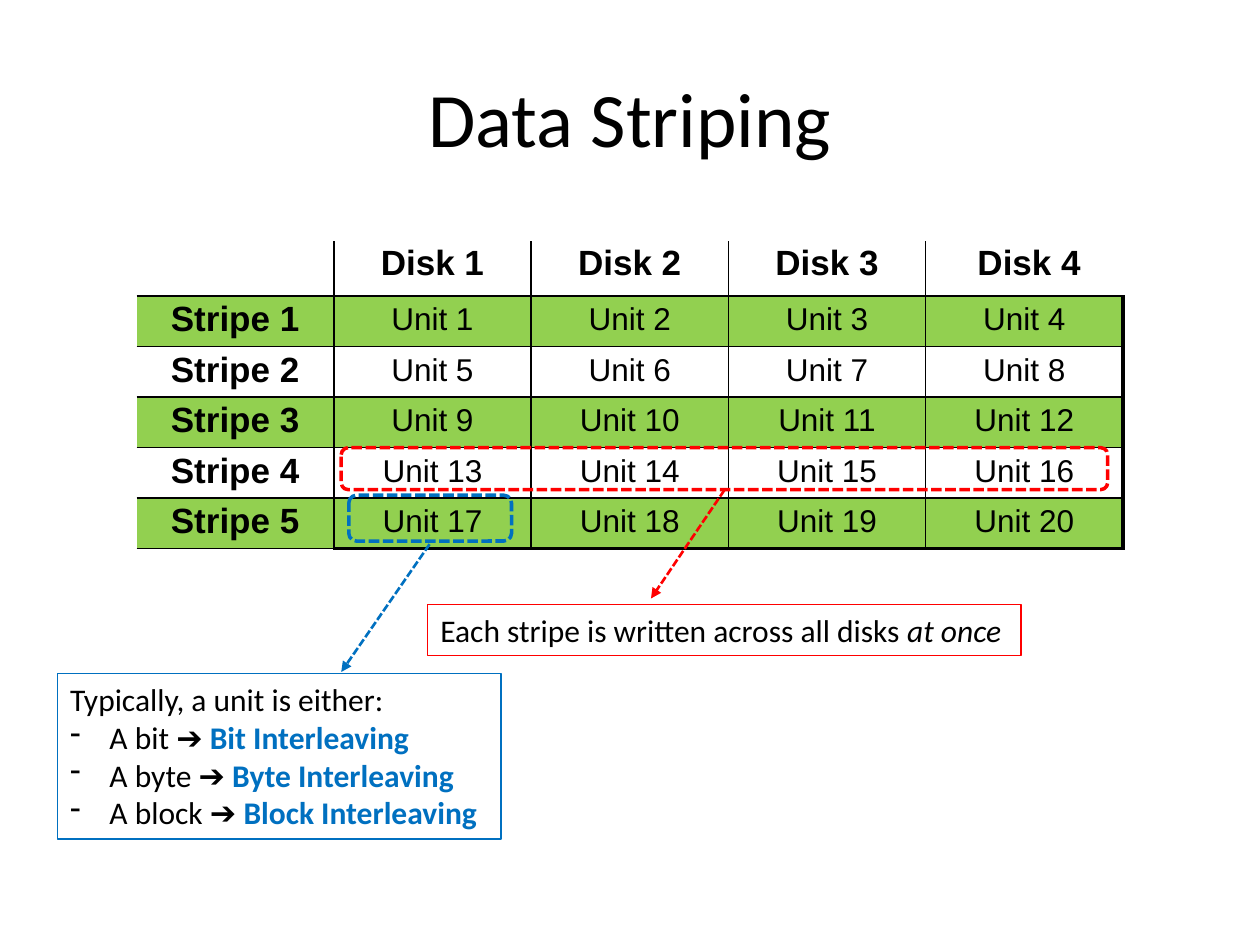
from lxml import etree
from pptx import Presentation
from pptx.dml.color import RGBColor
from pptx.enum.dml import MSO_LINE
from pptx.enum.shapes import MSO_CONNECTOR, MSO_SHAPE
from pptx.enum.text import MSO_ANCHOR, PP_ALIGN
from pptx.oxml.ns import qn
from pptx.util import Pt

BLACK = RGBColor(0x00, 0x00, 0x00)
GREEN = RGBColor(0x92, 0xD0, 0x50)
RED = RGBColor(0xFF, 0x00, 0x00)
BLUE = RGBColor(0x00, 0x70, 0xC0)
CENTER, LEFT = PP_ALIGN.CENTER, PP_ALIGN.LEFT
MIDDLE, TOP = MSO_ANCHOR.MIDDLE, MSO_ANCHOR.TOP
DASH = MSO_LINE.SQUARE_DOT
RECT, ROUND_RECT = MSO_SHAPE.RECTANGLE, MSO_SHAPE.ROUNDED_RECTANGLE
STRAIGHT = MSO_CONNECTOR.STRAIGHT

DISKS, STRIPES = 4, 5
COL_W, HEAD_H, ROW_H = 112.75, 29.7, 27.4
THIN, THICK = 1, 2.25


def set_font(font, size, name="Calibri", color=BLACK, bold=False):
    font.size, font.name, font.bold = Pt(size), name, bold
    font.color.rgb = color


def add_title(slide, text):
    tf = slide.shapes.add_textbox(Pt(36), Pt(21.6), Pt(648), Pt(90)).text_frame
    tf.word_wrap = True
    tf.vertical_anchor = MIDDLE
    p = tf.paragraphs[0]
    p.text, p.alignment = text, CENTER
    set_font(p.font, 44)


def set_borders(cell, widths):
    """Draw the left, right, top and bottom borders; a width of 0 hides one."""
    tc_pr = cell._tc.get_or_add_tcPr()
    for side, width in zip("LRTB", widths):
        ln = etree.SubElement(tc_pr, qn(f"a:ln{side}"), w=str(Pt(width)))
        if width:
            fill = etree.SubElement(ln, qn("a:solidFill"))
            etree.SubElement(fill, qn("a:srgbClr"), val=str(BLACK))
        else:
            etree.SubElement(ln, qn("a:noFill"))


def fill_cell(cell, row, col):
    if row == 0:
        # The last heading is set slightly to the right
        text = ["", "Disk 1", "Disk 2", "Disk 3", " Disk 4"][col]
    elif col == 0:
        text = f"Stripe {row}"
    else:
        text = f"Unit {(row - 1) * DISKS + col}"
    heading = row == 0 or col == 0

    right = THIN if col < DISKS else THICK if row else 0
    bottom = THICK if row == STRIPES and col else THIN
    set_borders(cell, (THIN if col else 0, right, THIN if row else 0, bottom))
    if row % 2:
        cell.fill.solid()
        cell.fill.fore_color.rgb = GREEN
    else:
        cell.fill.background()

    cell.vertical_anchor = MIDDLE if row else TOP
    p = cell.text_frame.paragraphs[0]
    p.text, p.alignment, p.line_spacing = text, CENTER, 0.9
    set_font(p.font, 20 if heading else 18, "Arial", bold=heading)


def add_stripe_table(slide):
    table = slide.shapes.add_table(
        STRIPES + 1, DISKS + 1, Pt(78), Pt(137.9),
        Pt(COL_W * (DISKS + 1)), Pt(HEAD_H + ROW_H * STRIPES)).table
    table.first_row = table.horz_banding = False
    for column in table.columns:
        column.width = Pt(COL_W)
    for r, row in enumerate(table.rows):
        row.height = Pt(ROW_H if r else HEAD_H)
        for c, cell in enumerate(row.cells):
            fill_cell(cell, r, c)


def add_box(slide, kind, box, color, width):
    sp = slide.shapes.add_shape(kind, *map(Pt, box))
    sp.shadow.inherit = False
    sp.fill.background()
    sp.line.color.rgb = color
    sp.line.width = Pt(width)
    return sp


def add_marker(slide, box, color):
    add_box(slide, ROUND_RECT, box, color, 2).line.dash_style = DASH


def add_arrow(slide, start, end, color):
    cxn = slide.shapes.add_connector(STRAIGHT, *map(Pt, start + end))
    cxn.line.color.rgb = color
    cxn.line.width = Pt(1.5)
    cxn.line.dash_style = DASH
    etree.SubElement(cxn.line._get_or_add_ln(), qn("a:tailEnd"), type="triangle")
    etree.SubElement(cxn._element.spPr, qn("a:effectLst"))


def add_note(slide, box, color):
    """Add an outlined note and return its text frame."""
    tf = add_box(slide, RECT, box, color, 0.75).text_frame
    tf.word_wrap = False
    tf.vertical_anchor = TOP
    return tf


def add_line(p, *texts):
    """Write the runs of a left-aligned note line and return them."""
    p.alignment = LEFT
    set_font(p.font, 18)
    runs = []
    for text in texts:
        r = p.add_run()
        r.text = text
        runs.append(r)
    return runs


def add_dash_bullet(p):
    p_pr = p._p.get_or_add_pPr()
    p_pr.set("marL", str(Pt(22.5)))
    p_pr.set("indent", str(-Pt(22.5)))
    bullet = etree.Element(qn("a:buChar"), char="-")
    p_pr.insert(0, bullet)


def add_unit_note(slide, box):
    tf = add_note(slide, box, BLUE)
    add_line(tf.paragraphs[0], "Typically, a unit is either:")
    for unit in ("bit", "byte", "block"):
        p = tf.add_paragraph()
        add_dash_bullet(p)
        _, term = add_line(p, f"A {unit} ➔ ", f"{unit.title()} Interleaving")
        term.font.bold = True
        term.font.color.rgb = BLUE


def main():
    prs = Presentation()
    prs.slide_width, prs.slide_height = Pt(720), Pt(540)
    slide = prs.slides.add_slide(prs.slide_layouts[6])

    add_title(slide, "Data Striping")
    add_stripe_table(slide)

    add_marker(slide, (195, 255.8, 438, 24), RED)
    add_arrow(slide, (414, 280), (372, 342), RED)
    tf = add_note(slide, (244.5, 345.4, 339, 29.1), RED)
    _, emphasis = add_line(
        tf.paragraphs[0], "Each stripe is written across all disks ", "at once")
    emphasis.font.italic = True

    add_marker(slide, (199.3, 283, 93, 26.2), BLUE)
    add_arrow(slide, (245.5, 311), (195, 384), BLUE)
    add_unit_note(slide, (33, 385, 253.3, 94.5))

    prs.save("out.pptx")


if __name__ == "__main__":
    main()
